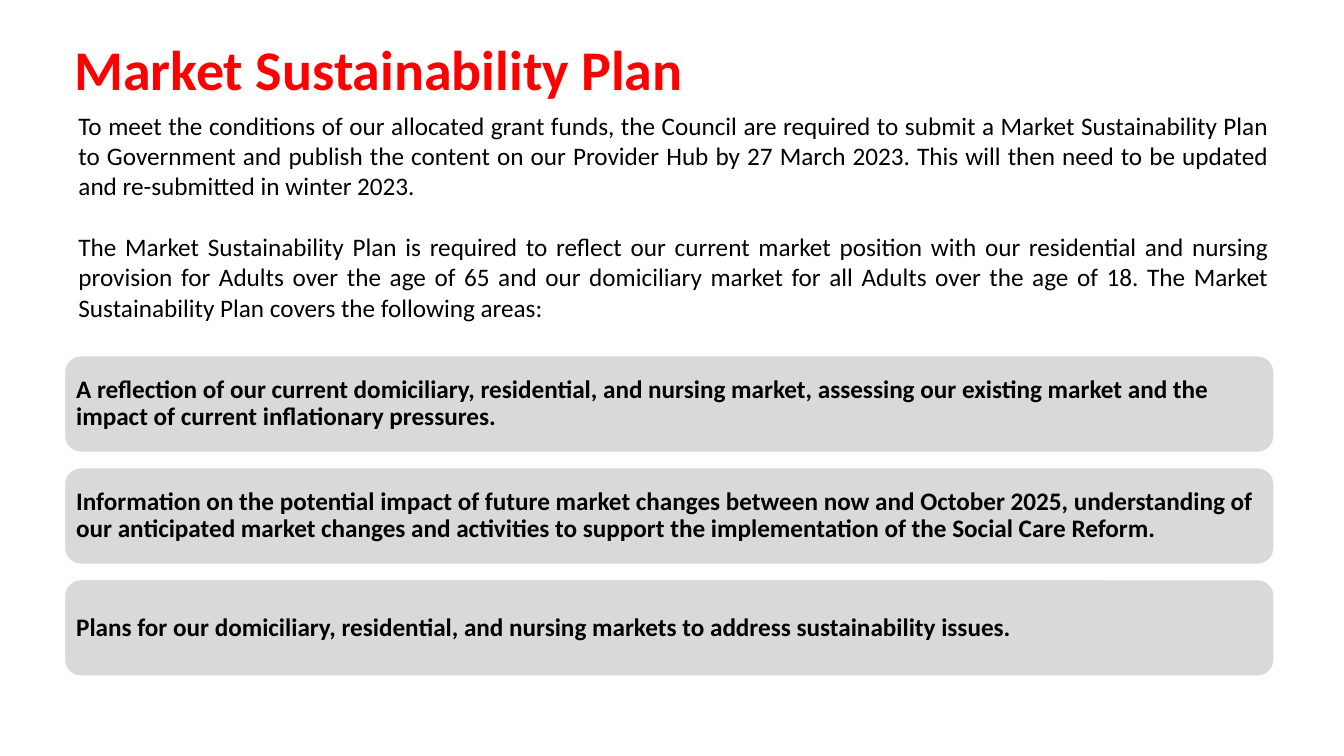
import pptx
import pptx.dml.color
import pptx.enum.shapes
import pptx.enum.text
import pptx.util

Pt = pptx.util.Pt
RED = pptx.dml.color.RGBColor(0xFF, 0x00, 0x00)
BLACK = pptx.dml.color.RGBColor(0x00, 0x00, 0x00)
WHITE = pptx.dml.color.RGBColor(0xFF, 0xFF, 0xFF)
GREY = pptx.dml.color.RGBColor(0xD9, 0xD9, 0xD9)

FONT = "Calibri"
BODY_SIZE = 18
PANEL_LEFT, PANEL_TOP = 46.08, 254.16
PANEL_WIDTH, PANEL_HEIGHT = 864, 69
PANEL_PITCH = 79.92
PANEL_INSET = 5

TITLE = "Market Sustainability Plan"
INTRODUCTION = [
    "To meet the conditions of our allocated grant funds, the Council are required to submit "
    "a Market Sustainability Plan to Government and publish the content on our Provider Hub "
    "by 27 March 2023. This will then need to be updated and re-submitted in winter 2023.",
    "The Market Sustainability Plan is required to reflect our current market position with "
    "our residential and nursing provision for Adults over the age of 65 and our domiciliary "
    "market for all Adults over the age of 18. The Market Sustainability Plan covers the "
    "following areas:",
]
AREAS = [
    "A reflection of our current domiciliary, residential, and nursing market, assessing our "
    "existing market and the impact of current inflationary pressures.",
    "Information on the potential impact of future market changes between now and October "
    "2025, understanding of our anticipated market changes and activities to support the "
    "implementation of the Social Care Reform.",
    "Plans for our domiciliary, residential, and nursing markets to address sustainability "
    "issues.",
]


def add_span(para, text, size=BODY_SIZE, color=BLACK, bold=False):
    span = para.add_run()
    span.text = text
    span.font.name = FONT
    span.font.size = Pt(size)
    span.font.color.rgb = color
    span.font.bold = bold


def add_text_box(page, left, top, width, height):
    """Add an empty wrapping text box and return its text frame."""
    box = page.shapes.add_textbox(Pt(left), Pt(top), Pt(width), Pt(height))
    box.text_frame.word_wrap = True
    return box.text_frame


def add_title(page):
    frame = add_text_box(page, 46.08, 20.88, 896.4, 83.52)
    add_span(frame.paragraphs[0], TITLE, size=40, color=RED, bold=True)


def add_introduction(page):
    frame = add_text_box(page, 48.96, 74.88, 864.72, 159.84)
    for index, text in enumerate(INTRODUCTION):
        para = frame.add_paragraph() if index else frame.paragraphs[0]
        para.alignment = pptx.enum.text.PP_ALIGN.JUSTIFY
        para.space_before = Pt(22 if index else 0)
        add_span(para, text)


def add_area_panel(page, top, text):
    panel = page.shapes.add_shape(
        pptx.enum.shapes.MSO_SHAPE.ROUNDED_RECTANGLE,
        Pt(PANEL_LEFT), Pt(top), Pt(PANEL_WIDTH), Pt(PANEL_HEIGHT),
    )
    panel.shadow.inherit = False
    panel.fill.solid()
    panel.fill.fore_color.rgb = GREY
    panel.line.color.rgb = WHITE
    panel.line.width = Pt(1)

    frame = panel.text_frame
    frame.word_wrap = True
    frame.vertical_anchor = pptx.enum.text.MSO_ANCHOR.MIDDLE
    frame.margin_left = frame.margin_right = Pt(PANEL_INSET)
    frame.margin_top = frame.margin_bottom = Pt(PANEL_INSET)
    para = frame.paragraphs[0]
    para.alignment = pptx.enum.text.PP_ALIGN.LEFT
    para.line_spacing = 0.9
    add_span(para, text, bold=True)


def main():
    deck = pptx.Presentation()
    deck.slide_width, deck.slide_height = Pt(960), Pt(540)
    page = deck.slides.add_slide(deck.slide_layouts[6])
    add_title(page)
    add_introduction(page)
    for index, text in enumerate(AREAS):
        add_area_panel(page, PANEL_TOP + index * PANEL_PITCH, text)
    deck.save("out.pptx")


if __name__ == "__main__":
    main()
